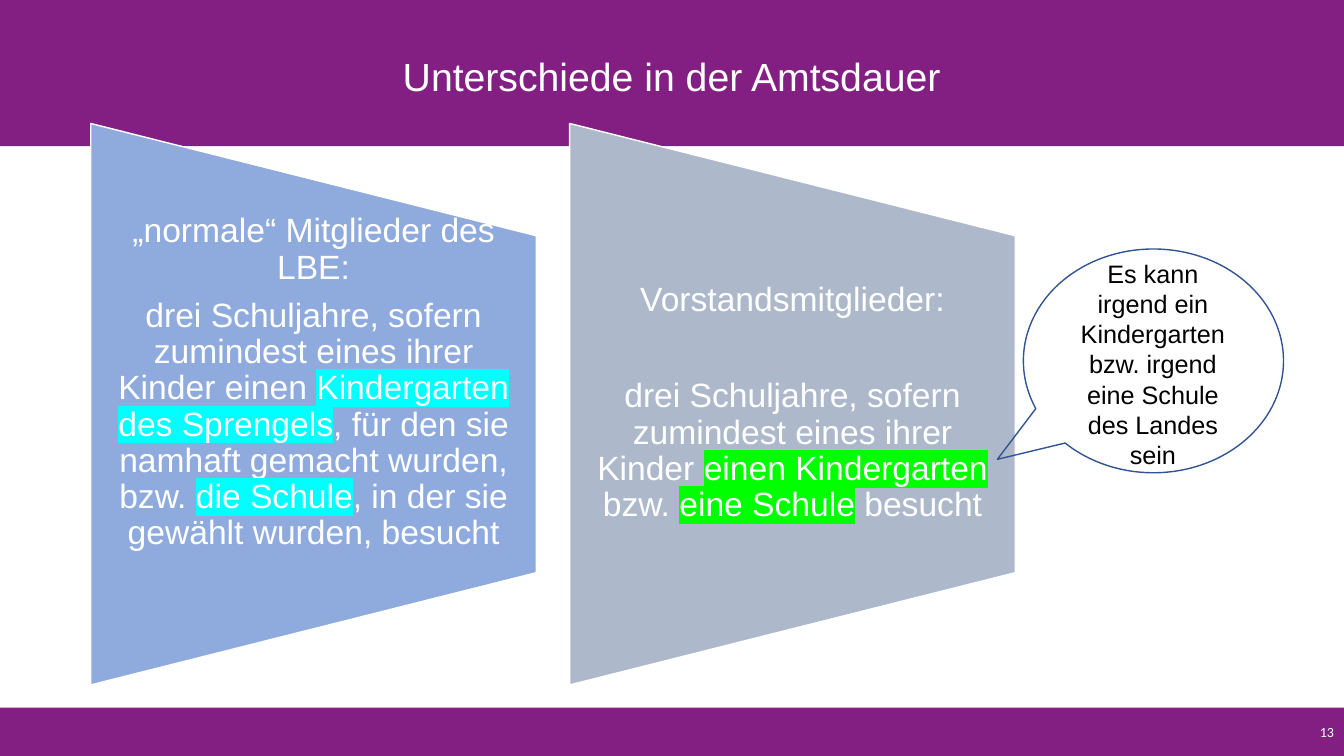
from lxml.etree import SubElement
from pptx import Presentation
from pptx.dml.color import RGBColor
from pptx.enum.shapes import MSO_SHAPE
from pptx.enum.text import MSO_ANCHOR, PP_ALIGN
from pptx.oxml.ns import qn
from pptx.util import Inches, Pt

PURPLE, WHITE, CYAN, GREEN = "831F82", "FFFFFF", "00FFFF", "00FF00"

presentation = Presentation()
presentation.slide_width = Inches(13.33)
presentation.slide_height = Inches(7.5)
slide = presentation.slides.add_slide(presentation.slide_layouts[6])


def add_panel(kind, left, top, width, height, fill=None, line=None):
    shape = slide.shapes.add_shape(
        kind, Inches(left), Inches(top), Inches(width), Inches(height))
    shape.shadow.inherit = False
    for part, color in ((shape.fill, fill), (shape.line.fill, line)):
        if color:
            part.solid()
            part.fore_color.rgb = RGBColor.from_string(color)
        else:
            part.background()
    if line:
        shape.line.width = Pt(1)
    return shape


def write(shape, paragraphs, size, color=WHITE, font="Arial",
          align=PP_ALIGN.CENTER, frame_format=None, paragraph_format=None):
    """Each paragraph is a list of (text, highlight) pairs."""
    frame = shape.text_frame
    frame.word_wrap = True
    for name, value in (frame_format or {}).items():
        setattr(frame, name, value)
    for index, runs in enumerate(paragraphs):
        paragraph = frame.add_paragraph() if index else frame.paragraphs[0]
        paragraph.alignment = align
        for name, value in (paragraph_format or {}).items():
            setattr(paragraph, name, value)
        for text, highlight in runs:
            run = paragraph.add_run()
            run.text = text
            run.font.size = Pt(size)
            run.font.name = font
            run.font.color.rgb = RGBColor.from_string(color)
            if highlight:
                properties = run.font._element
                mark = SubElement(properties, qn("a:highlight"))
                SubElement(mark, qn("a:srgbClr"), val=highlight)
                properties.find(qn("a:solidFill")).addnext(mark)


# Footer and header bars
footer = add_panel(MSO_SHAPE.RECTANGLE, 0, 7.02, 13.33, 0.48, PURPLE)
write(footer, [[("13", None)]], 10, font="Calibri", align=PP_ALIGN.RIGHT,
      frame_format={"vertical_anchor": MSO_ANCHOR.MIDDLE})
add_panel(MSO_SHAPE.RECTANGLE, 0, 0, 13.33, 1.45, PURPLE)

# Title
title = slide.shapes.add_textbox(
    Inches(2.35), Inches(0.01), Inches(8.62), Inches(1.45))
write(title, [[("Unterschiede in der Amtsdauer", None)]], 28,
      frame_format={"vertical_anchor": MSO_ANCHOR.MIDDLE},
      paragraph_format={"line_spacing": 1.07})

# Two trapezoids: left, fill, text top, gap between paragraphs, paragraphs
members = [
    [("„normale“ Mitglieder des LBE:", None)],
    [("drei Schuljahre, sofern zumindest eines ihrer Kinder einen ", None),
     ("Kindergarten des Sprengels", CYAN),
     (", für den sie namhaft gemacht wurden, bzw. ", None),
     ("die Schule", CYAN),
     (", in der sie gewählt wurden, besucht", None)],
]
board = [
    [("Vorstandsmitglieder:", None)],
    [("drei Schuljahre, sofern zumindest eines ihrer Kinder ", None),
     ("einen Kindergarten", GREEN),
     (" bzw. ", None),
     ("eine Schule", GREEN),
     (" besucht", None)],
]
text_format = {
    "vertical_anchor": MSO_ANCHOR.MIDDLE,
    "margin_left": Inches(0.17), "margin_right": Inches(0.17),
    "margin_top": 0, "margin_bottom": 0,
}
for left, fill, text_top, gap, paragraphs in (
        (0.9, "8FAADC", 2.13, 8.4, members),
        (5.65, "ADB9CA", 2.33, 43, board)):
    trapezoid = add_panel(MSO_SHAPE.FLOWCHART_MANUAL_OPERATION,
                          left - 0.575, 1.8, 5.57, 4.42, fill, WHITE)
    trapezoid.rotation = 270
    text_box = slide.shapes.add_textbox(
        Inches(left), Inches(text_top), Inches(4.42), Inches(3.34))
    write(text_box, paragraphs, 24, frame_format=text_format,
          paragraph_format={"line_spacing": 0.9})
    text_box.text_frame.paragraphs[1].space_before = Pt(gap)

# Speech bubble
bubble = add_panel(MSO_SHAPE.OVAL_CALLOUT, 10.15, 2.47, 2.58, 2.22,
                   line="325491")
bubble.adjustments[0] = -0.6
bubble.adjustments[1] = 0.44
bubble_text = slide.shapes.add_textbox(
    Inches(10.55), Inches(2.51), Inches(1.77), Inches(2.22))
write(bubble_text, [[("Es kann irgend ein Kindergarten bzw. irgend eine "
                      "Schule des Landes sein", None)]], 18, "000000")

presentation.save("out.pptx")
